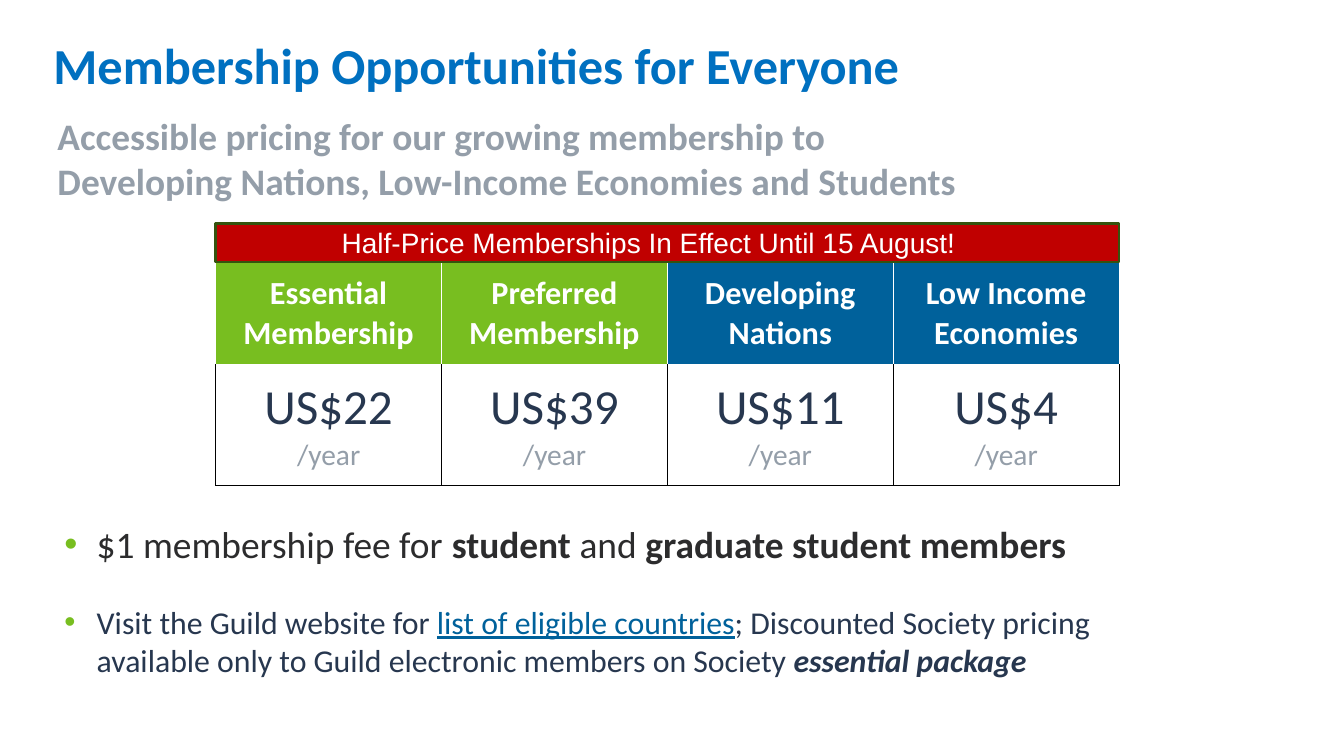
from lxml.etree import SubElement as Sub
from pptx import Presentation
from pptx.dml.color import RGBColor as RGB
from pptx.enum.shapes import MSO_SHAPE as Shape
from pptx.enum.text import MSO_ANCHOR as Anchor, MSO_AUTO_SIZE as Fit, PP_ALIGN as Align
from pptx.oxml.ns import qn
from pptx.util import Inches, Pt

WHITE, BLACK = RGB(255, 255, 255), RGB(0, 0, 0)
SKY, BLUE = RGB(0x00, 0x70, 0xC0), RGB(0x00, 0x61, 0x9B)
GREEN, FOREST = RGB(0x78, 0xBE, 0x20), RGB(0x35, 0x53, 0x0E)
RED, GRAY = RGB(0xC0, 0, 0), RGB(0x94, 0x9E, 0xA9)
NAVY, INK = RGB(0x27, 0x37, 0x4F), RGB(0x2C, 0x2C, 0x2D)

PLANS = [
    ("Essential Membership", "US$22", GREEN),
    ("Preferred Membership", "US$39", GREEN),
    ("Developing Nations", "US$11", BLUE),
    ("Low Income Economies", "US$4", BLUE),
]


def style(para, size, color, bold=False, face="Calibri"):
    font = para.font
    font.name, font.size, font.bold = face, Pt(size), bold
    font.color.rgb = color


def add_box(slide, left, top, width, height, pad=0):
    box = slide.shapes.add_textbox(Inches(left), Inches(top), Inches(width), Inches(height))
    frame = box.text_frame
    frame.word_wrap = True
    frame.margin_left = frame.margin_right = Inches(pad)
    frame.margin_top = frame.margin_bottom = Inches(pad / 2)
    return frame


def add_title(slide, text):
    title = slide.shapes.title
    title.left, title.top = Inches(0.43), Inches(0.37)
    title.width, title.height = Inches(11.08), Inches(0.61)
    frame = title.text_frame
    frame.text = text
    frame.auto_size, frame.vertical_anchor = Fit.NONE, Anchor.MIDDLE
    para = frame.paragraphs[0]
    para.alignment, para.line_spacing = Align.LEFT, 0.9
    style(para, 36, SKY, True)


def add_lead(slide, first, second):
    frame = add_box(slide, 0.57, 1.26, 12.43, 0.61)
    frame.vertical_anchor = Anchor.MIDDLE
    para = frame.paragraphs[0]
    para.add_run().text = first
    para.add_line_break()
    para.add_run().text = second
    style(para, 26.7, GRAY, True)


def set_edges(cell, **colors):
    props = cell._tc.get_or_add_tcPr()
    for side in "LRTB":
        line = Sub(props, qn(f"a:ln{side}"), w=str(Pt(0.75)))
        fill = Sub(line, qn("a:solidFill"))
        Sub(fill, qn("a:srgbClr"), val=str(colors.get(side, WHITE)))


def fill_cell(cell, color, lines):
    """Each line is (text, size, color, bold)."""
    cell.fill.solid()
    cell.fill.fore_color.rgb = color
    cell.vertical_anchor = Anchor.MIDDLE
    cell.margin_left = cell.margin_right = Inches(0.13)
    cell.margin_top = cell.margin_bottom = Inches(0.13)
    cell.text = "\n".join(line[0] for line in lines)
    for para, line in zip(cell.text_frame.paragraphs, lines):
        para.alignment = Align.CENTER
        style(para, *line[1:])


def add_prices(slide):
    frame = slide.shapes.add_table(
        2, len(PLANS), Inches(2.14), Inches(2.59), Inches(8.96), Inches(2.22))
    table = frame.table
    table.horz_banding = False
    table.rows[0].height, table.rows[1].height = Inches(1.02), Inches(1.2)
    for col, (name, price, color) in enumerate(PLANS):
        head, body = table.cell(0, col), table.cell(1, col)
        set_edges(head)
        set_edges(body, L=BLACK, R=BLACK, B=BLACK)
        fill_cell(head, color, [(name, 23, WHITE, True)])
        fill_cell(body, WHITE, [(price, 35, NAVY, False), ("/year", 21, GRAY, False)])


def add_banner(slide, text):
    bar = slide.shapes.add_shape(
        Shape.RECTANGLE, Inches(2.14), Inches(2.22), Inches(8.96), Inches(0.38))
    bar.shadow.inherit = False
    bar.fill.solid()
    bar.fill.fore_color.rgb = RED
    bar.line.color.rgb, bar.line.width = FOREST, Pt(2)
    para = add_box(slide, 3.29, 2.19, 6.98, 0.44, 0.1).paragraphs[0]
    para.text = text
    style(para, 20, WHITE, face="Arial")


def add_bullet(para, size, color, runs):
    """Each run is (text, marks): b bold, i italic, u link look."""
    props = para._p.get_or_add_pPr()
    props.set("marL", str(Inches(1.08)))
    props.set("indent", str(Inches(-0.32)))
    Sub(Sub(props, qn("a:buClr")), qn("a:srgbClr"), val=str(GREEN))
    Sub(props, qn("a:buFont"), typeface="Arial")
    Sub(props, qn("a:buChar"), char="•")
    style(para, size, color)
    for text, marks in runs:
        run = para.add_run()
        run.text = text
        if "b" in marks:
            run.font.bold = True
        if "i" in marks:
            run.font.italic = True
        if "u" in marks:
            run.font.underline = True
            run.font.color.rgb = BLUE


def add_notes(slide):
    frame = add_box(slide, -0.12, 5.17, 11.63, 1.48)
    add_bullet(frame.paragraphs[0], 26.7, INK, [
        ("$1 membership fee for ", ""), ("student", "b"),
        (" and ", ""), ("graduate student members", "b")])
    visit = frame.add_paragraph()
    visit.space_before = Pt(26)
    add_bullet(visit, 22.7, NAVY, [
        ("Visit the Guild website for ", ""), ("list of eligible countries", "u"),
        ("; Discounted Society pricing available only to Guild electronic "
         "members on Society ", ""),
        ("essential package", "bi")])


def main():
    deck = Presentation()
    deck.slide_width, deck.slide_height = Inches(13.33), Inches(7.5)
    slide = deck.slides.add_slide(deck.slide_layouts[5])

    # Heading
    add_title(slide, "Membership Opportunities for Everyone")

    # Bullets below the table
    add_notes(slide)

    # Lead text
    add_lead(slide, "Accessible pricing for our growing membership to",
             "Developing Nations, Low-Income Economies and Students")

    # Price table with its banner
    add_prices(slide)
    add_banner(slide, "Half-Price Memberships In Effect Until 15 August!")

    deck.save("out.pptx")


if __name__ == "__main__":
    main()
